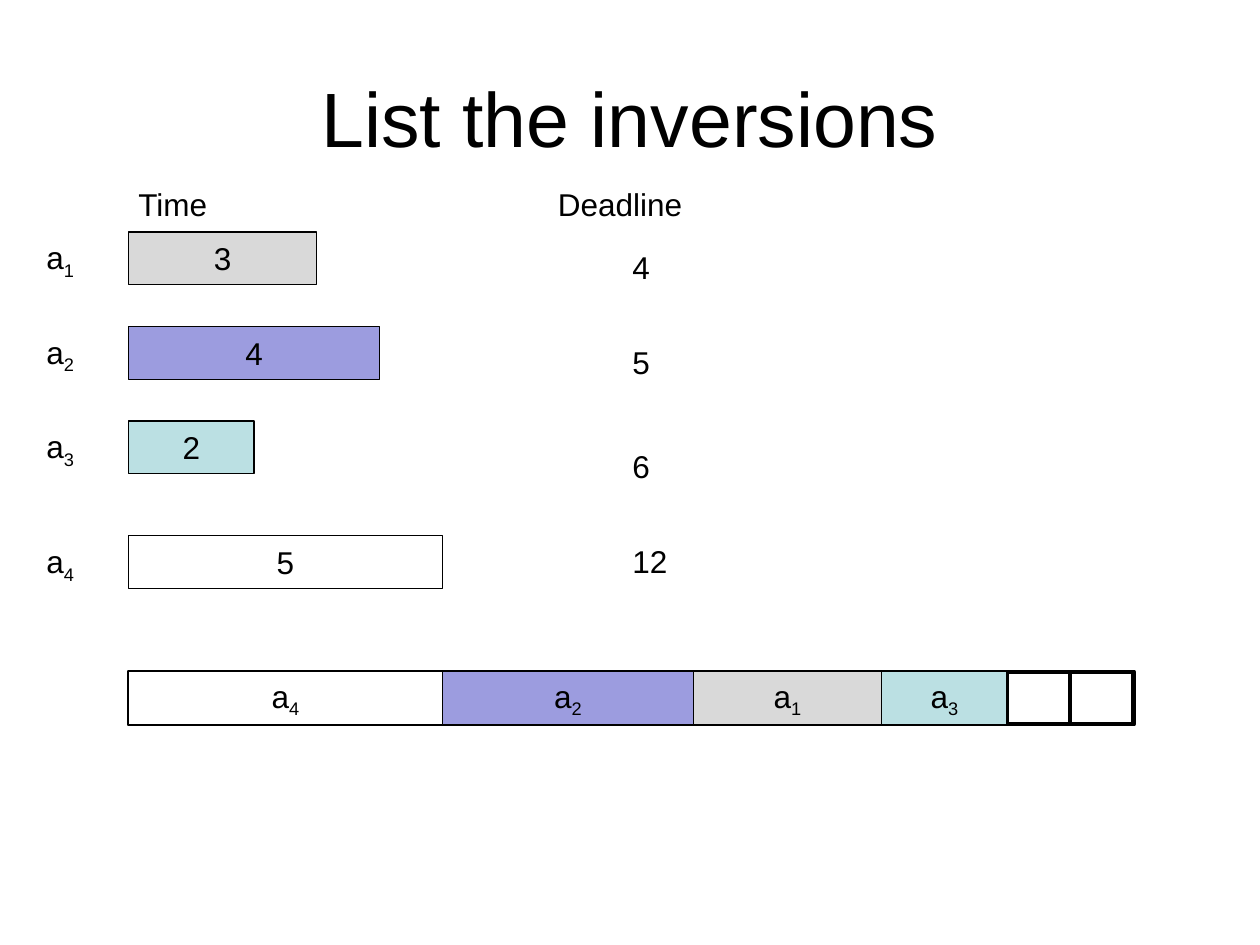
from dataclasses import dataclass

from lxml.etree import SubElement
from pptx import Presentation
from pptx.dml.color import RGBColor
from pptx.enum.shapes import MSO_CONNECTOR as Connector, MSO_SHAPE as Shape
from pptx.enum.text import MSO_ANCHOR as Anchor, MSO_AUTO_SIZE as AutoSize, PP_ALIGN as Align
from pptx.oxml.ns import qn
from pptx.util import Inches, Pt


@dataclass(frozen=True)
class Theme:
    font: str = "Arial"
    ink: str = "000000"
    title_size: int = 44
    body_size: int = 18
    thin: float = 0.75
    thick: float = 2.25


@dataclass(frozen=True)
class Job:
    index: int
    time: int
    deadline: int
    color: str
    top: float
    deadline_top: float


THEME = Theme()
JOBS = [
    Job(1, 3, 4, "D9D9D9", 1.84, 1.92),
    Job(2, 4, 5, "9C9CDF", 2.59, 2.67),
    Job(3, 2, 6, "BBE0E3", 3.34, 3.5),
    Job(4, 5, 12, "FFFFFF", 4.25, 4.25),
]
SCHEDULE = [4, 2, 1, 3]

SLOTS = 16
CHART_LEFT = 1.02
CHART_WIDTH = 7.98
SLOT = 7.97 / SLOTS
BAR_HEIGHT = 0.42
TIMELINE_TOP = 5.33
LABEL_LEFT, LABEL_WIDTH = 0.27, 0.66
HEADING_TOP, HEADING_WIDTH = 1.42, 1.92
TEXT_HEIGHT = 0.4


def rgb(color):
    return RGBColor.from_string(color)


def write_text(tf, text, subscript="", size=THEME.body_size, align=Align.LEFT,
               anchor=Anchor.TOP, wrap=True):
    tf.word_wrap = wrap
    tf.vertical_anchor = anchor
    p = tf.paragraphs[0]
    p.alignment = align
    for part in filter(None, (text, subscript)):
        r = p.add_run()
        r.text = part
        r.font.name = THEME.font
        r.font.size = Pt(size)
        r.font.color.rgb = rgb(THEME.ink)
    if subscript:
        r.font._element.set("baseline", "-25000")


def add_label(s, left, top, width, text, **style):
    sp = s.shapes.add_textbox(*map(Inches, (left, top, width, TEXT_HEIGHT)))
    write_text(sp.text_frame, text, **style)
    sp.text_frame.auto_size = AutoSize.SHAPE_TO_FIT_TEXT


def add_bar(s, left, top, width, fill=None, line=THEME.thin):
    sp = s.shapes.add_shape(Shape.RECTANGLE, *map(Inches, (left, top, width, BAR_HEIGHT)))
    sp.shadow.inherit = False
    if fill:
        sp.fill.solid()
        sp.fill.fore_color.rgb = rgb(fill)
    else:
        sp.fill.background()
    sp.line.color.rgb = rgb(THEME.ink)
    sp.line.width = Pt(line)
    return sp


def add_job_bar(s, job, slot, top, text, subscript=""):
    """Draw a bar as long as the job's time, starting at the given time slot."""
    sp = add_bar(s, CHART_LEFT + slot * SLOT, top, job.time * SLOT, job.color)
    write_text(sp.text_frame, text, subscript, align=Align.CENTER,
               anchor=Anchor.MIDDLE, wrap=False)


def add_tick(s, x):
    ends = (x, TIMELINE_TOP, x, TIMELINE_TOP + BAR_HEIGHT)
    line = s.shapes.add_connector(Connector.STRAIGHT, *map(Inches, ends))
    line.line.color.rgb = rgb(THEME.ink)
    line.line.width = Pt(THEME.thick)
    SubElement(line._element.spPr, qn("a:effectLst"))


def add_title(s, text):
    sp = s.shapes.title
    sp.left, sp.top, sp.width, sp.height = map(Inches, (0.5, 0.3, 9, 1.25))
    write_text(sp.text_frame, text, size=THEME.title_size, align=Align.CENTER,
               anchor=Anchor.MIDDLE)


def add_job_row(s, job):
    add_label(s, LABEL_LEFT, job.top, LABEL_WIDTH, "a", subscript=str(job.index))
    add_job_bar(s, job, 0, job.top, str(job.time))
    deadline = str(job.deadline)
    add_label(s, 4.92, job.deadline_top, 0.2 + 0.14 * len(deadline), deadline, wrap=False)


def add_timeline(s):
    add_bar(s, CHART_LEFT, TIMELINE_TOP, CHART_WIDTH, line=THEME.thick)
    for i in range(1, SLOTS + 1):
        add_tick(s, CHART_LEFT + i * SLOT)
    jobs = {job.index: job for job in JOBS}
    start = 0
    for index in SCHEDULE:
        add_job_bar(s, jobs[index], start, TIMELINE_TOP, "a", str(index))
        start += jobs[index].time


def main():
    prs = Presentation()
    prs.slide_width, prs.slide_height = Inches(10), Inches(7.5)
    s = prs.slides.add_slide(prs.slide_layouts[5])
    add_title(s, "List the inversions")
    add_label(s, 1, HEADING_TOP, HEADING_WIDTH, "Time")
    add_label(s, 4.33, HEADING_TOP, HEADING_WIDTH, "Deadline")
    for job in JOBS:
        add_job_row(s, job)
    add_timeline(s)
    prs.save("out.pptx")


if __name__ == "__main__":
    main()
